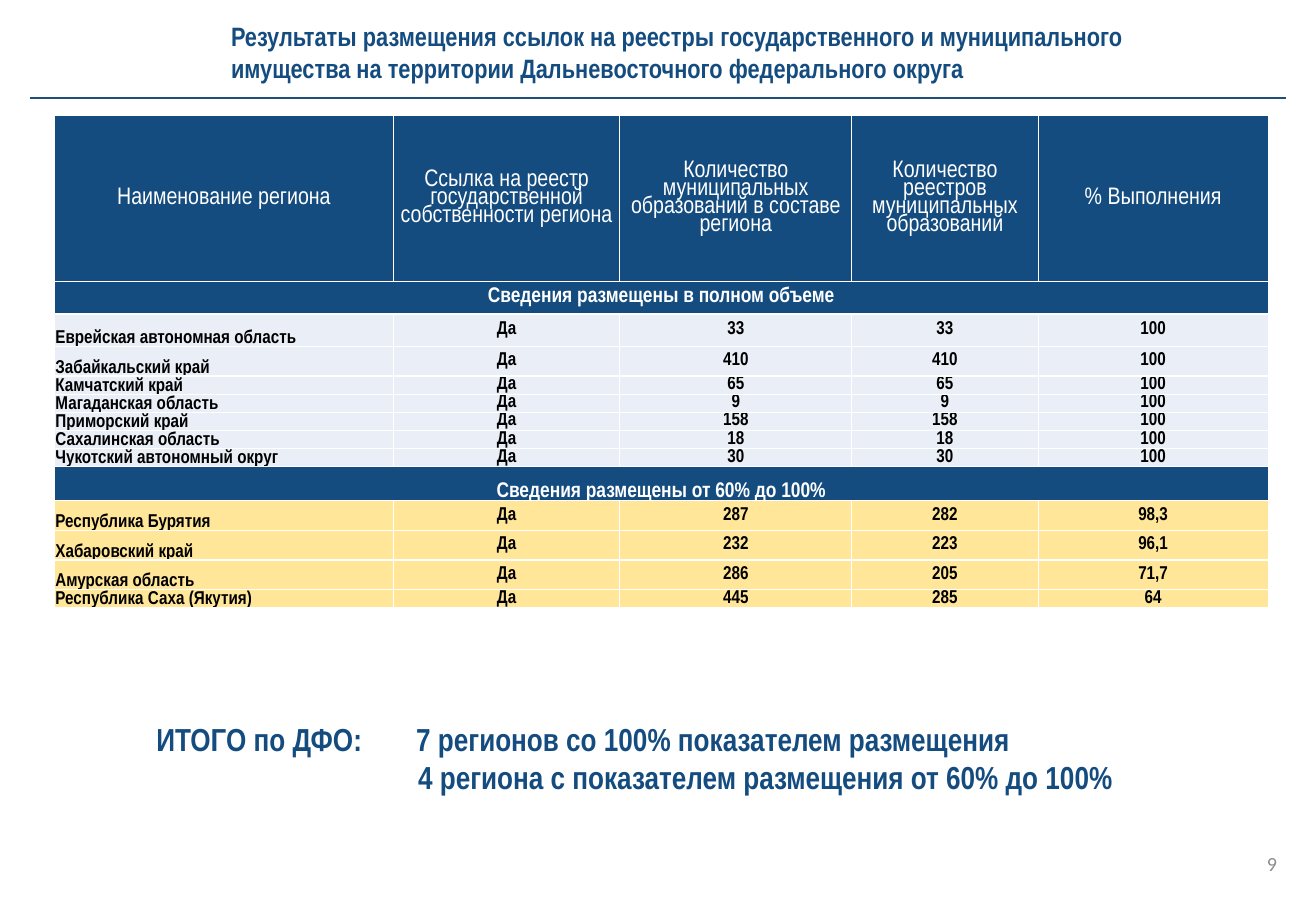
from dataclasses import dataclass

from lxml.etree import SubElement
from pptx import Presentation
from pptx.dml.color import RGBColor as RGB
from pptx.enum.shapes import MSO_CONNECTOR as Link
from pptx.enum.text import MSO_ANCHOR as Anchor, MSO_AUTO_SIZE as Fit, PP_ALIGN as Align
from pptx.oxml.ns import qn
from pptx.util import Inches, Pt


@dataclass(frozen=True)
class Theme:
    face: str = "Arial Narrow"
    plain: str = "Calibri"
    navy: str = "144C80"
    rule: str = "1F4E79"
    pale: str = "EAEFF7"
    gold: str = "FFE699"
    white: str = "FFFFFF"
    black: str = "000000"
    gray: str = "8C8C8C"
    title: float = 20
    head: float = 18
    band: float = 16
    body: float = 14
    total: float = 24
    page: float = 15.1


THEME = Theme()
SMALL = 0.19
COLS = (3.55, 2.37, 2.43, 1.95, 2.41)
HEAD = (
    "Наименование региона",
    "Ссылка на реестр государственной собственности региона",
    "Количество муниципальных образований в составе региона",
    "Количество реестров муниципальных образований",
    "% Выполнения",
)
# Row height, region, municipalities, registers, percent
FULL = (
    (0.34, "Еврейская автономная область", "33", "33", "100"),
    (0.31, "Забайкальский край", "410", "410", "100"),
    (SMALL, "Камчатский край", "65", "65", "100"),
    (SMALL, "Магаданская область", "9", "9", "100"),
    (SMALL, "Приморский край", "158", "158", "100"),
    (SMALL, "Сахалинская область", "18", "18", "100"),
    (SMALL, "Чукотский автономный округ", "30", "30", "100"),
)
PART = (
    (0.31, "Республика Бурятия", "287", "282", "98,3"),
    (0.31, "Хабаровский край", "232", "223", "96,1"),
    (0.31, "Амурская область", "286", "205", "71,7"),
    (SMALL, "Республика Саха (Якутия)", "445", "285", "64"),
)
# Band height, title, title anchor, row fill, rows
GROUPS = (
    (0.34, "Сведения размещены в полном объеме", Anchor.MIDDLE, THEME.pale, FULL),
    (0.36, "Сведения размещены от 60% до 100%", Anchor.BOTTOM, THEME.gold, PART),
)


def add_run(para, text, size, color, bold=True, face=THEME.face):
    run = para.add_run()
    run.text = text
    font = run.font
    font.name, font.size, font.bold = face, Pt(size), bold
    font.color.rgb = RGB.from_string(color)


def add_text(slide, box, lines, size, color=THEME.navy, bold=True, face=THEME.face,
             align=Align.LEFT, anchor=Anchor.TOP, pads=None, fit=Fit.NONE):
    """Add a text box; each line is its text, left margin and first-line indent."""
    frame = slide.shapes.add_textbox(*map(Inches, box)).text_frame
    frame.word_wrap, frame.auto_size = True, fit
    frame.vertical_anchor = anchor
    if pads:
        (frame.margin_left, frame.margin_top,
         frame.margin_right, frame.margin_bottom) = map(Inches, pads)
    for pos, (text, left, first) in enumerate(lines):
        para = frame.add_paragraph() if pos else frame.paragraphs[0]
        para.alignment = align
        props = para._p.get_or_add_pPr()
        props.set("marL", str(Inches(left)))
        props.set("indent", str(Inches(first)))
        add_run(para, text, size, color, bold, face)


def add_rule(slide, start, end):
    line = slide.shapes.add_connector(Link.STRAIGHT, *map(Inches, start + end))
    line.line.color.rgb = RGB.from_string(THEME.rule)
    line.line.width = Pt(1.75)
    SubElement(line._element.spPr, qn("a:effectLst"))


def style_cell(cell, fill):
    props = cell._tc.get_or_add_tcPr()
    for side in ("a:lnL", "a:lnR", "a:lnT", "a:lnB"):
        edge = SubElement(props, qn(side), w=str(Pt(1)))
        paint = SubElement(edge, qn("a:solidFill"))
        SubElement(paint, qn("a:srgbClr"), val=THEME.white)
    cell.fill.solid()
    cell.fill.fore_color.rgb = RGB.from_string(fill)
    cell.margin_left = cell.margin_top = cell.margin_right = Inches(0.01)
    cell.margin_bottom = 0


def fill_cell(cell, text, size, color, bold=True, align=Align.CENTER, anchor=Anchor.MIDDLE):
    cell.vertical_anchor = anchor
    para = cell.text_frame.paragraphs[0]
    para.alignment, para.line_spacing = align, 0.8
    add_run(para, text, size, color, bold)


def start_row(table, row, high, fill):
    table.rows[row].height = Inches(high)
    cells = [table.cell(row, col) for col in range(len(COLS))]
    for cell in cells:
        style_cell(cell, fill)
    return cells


def add_grid(slide):
    count = 1 + sum(1 + len(group[-1]) for group in GROUPS)
    frame = slide.shapes.add_table(count, len(COLS), *map(Inches, (0.57, 1.21, 12.72, 5.17)))
    table = frame.table
    table.first_row = table.horz_banding = False
    for col, wide in zip(table.columns, COLS):
        col.width = Inches(wide)

    for cell, text in zip(start_row(table, 0, 1.74, THEME.navy), HEAD):
        fill_cell(cell, text, THEME.head, THEME.white, bold=False)
    row = 1
    for high, title, anchor, fill, items in GROUPS:
        cells = start_row(table, row, high, THEME.navy)
        cells[0].merge(cells[-1])
        fill_cell(cells[0], title, THEME.band, THEME.white, anchor=anchor)
        row += 1
        for high, name, *stats in items:
            cells = start_row(table, row, high, fill)
            fill_cell(cells[0], name, THEME.body, THEME.black,
                      align=Align.LEFT, anchor=Anchor.BOTTOM)
            for cell, text in zip(cells[1:], ("Да", *stats)):
                fill_cell(cell, text, THEME.body, THEME.black)
            row += 1


def main():
    deck = Presentation()
    deck.slide_width, deck.slide_height = Inches(13.78), Inches(9.45)
    slide = deck.slides.add_slide(deck.slide_layouts[6])

    add_text(slide, (2.36, 0.19, 11.23, 0.71), (
        ("Результаты размещения ссылок на реестры государственного и муниципального", 0, 0),
        ("имущества на территории Дальневосточного федерального округа", 0, 0),
    ), THEME.title, anchor=Anchor.MIDDLE, pads=(0.06, 0.03, 0, 0.03))
    add_grid(slide)
    add_rule(slide, (0.31, 1.03), (13.47, 1.03))
    add_text(slide, (3.97, 7.49, 9.73, 0.91), (
        ("7 регионов со 100% показателем размещения", 0.31, -0.02),
        ("4 региона с показателем размещения от 60% до 100%", 0.31, 0),
    ), THEME.total, fit=Fit.SHAPE_TO_FIT_TEXT)
    add_text(slide, (1.54, 7.49, 2.78, 0.5), (("ИТОГО по ДФО:", 0, 0),),
             THEME.total, fit=Fit.SHAPE_TO_FIT_TEXT)
    add_text(slide, (12.92, 8.8, 0.55, 0.5), (("9", 0, 0),), THEME.page, THEME.gray,
             bold=False, face=THEME.plain, align=Align.RIGHT, anchor=Anchor.MIDDLE)
    deck.save("out.pptx")


if __name__ == "__main__":
    main()
